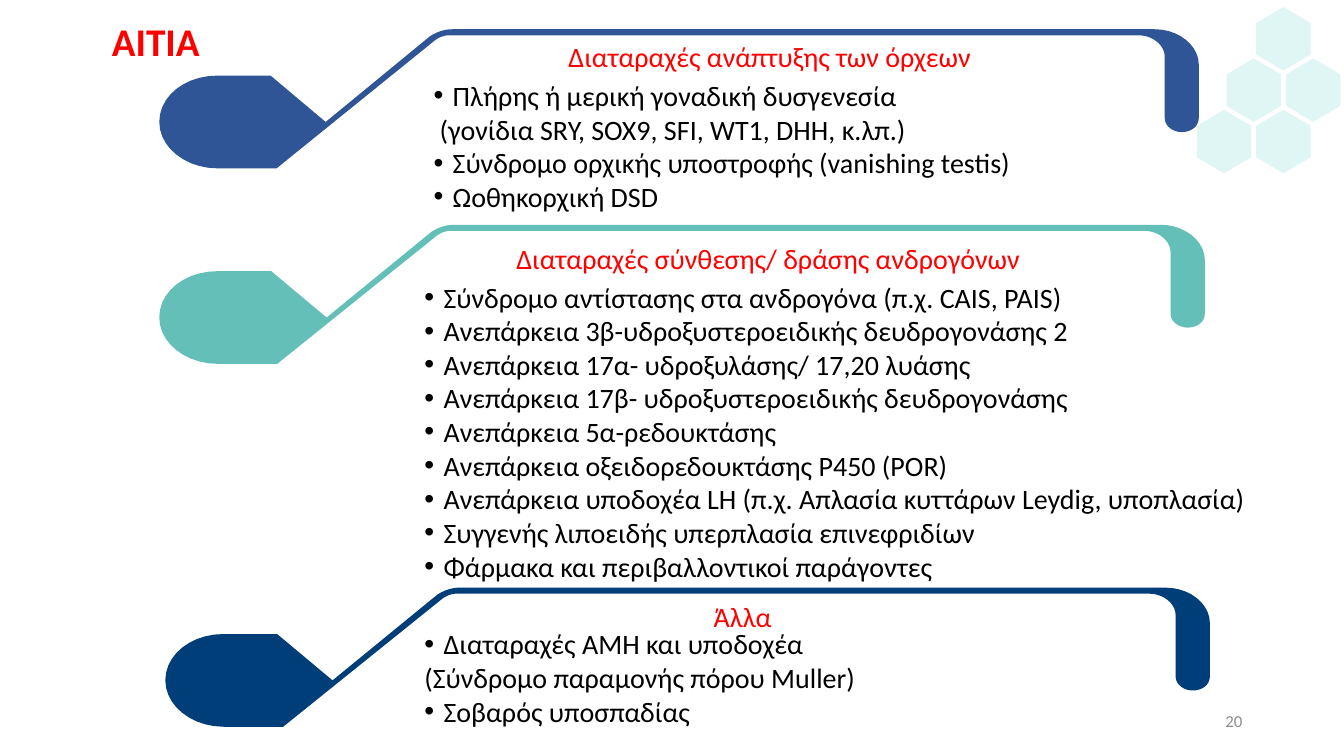
from lxml import etree
from pptx import Presentation
from pptx.dml.color import RGBColor
from pptx.enum.text import MSO_ANCHOR, MSO_AUTO_SIZE, PP_ALIGN
from pptx.oxml.ns import qn
from pptx.util import Inches, Pt

LEFT, CENTER, RIGHT = PP_ALIGN.LEFT, PP_ALIGN.CENTER, PP_ALIGN.RIGHT
TOP, MIDDLE, BOTTOM = MSO_ANCHOR.TOP, MSO_ANCHOR.MIDDLE, MSO_ANCHOR.BOTTOM
FIT = MSO_AUTO_SIZE.SHAPE_TO_FIT_TEXT
FONT = "Calibri"
RED, BLACK, GREY, PALE = "FF0000", "000000", "8C8C8C", "E0F6F4"
CURVE_STEPS = 10
RIBBON_WIDTH = 10.37

RIBBON = [
    (9.93, 0), (2.92, 0),
    (2.84, 0, 2.76, 0.03, 2.7, 0.07),
    (1.66, 0.92), (1.11, 0.46), (0.58, 0.46),
    (0.26, 0.46, 0, 0.66, 0, 0.92),
    (0, 1.17, 0.26, 1.38, 0.58, 1.38),
    (1.17, 1.38), (2.75, 0.11),
    (2.79, 0.08, 2.84, 0.06, 2.89, 0.06),
    (9.77, 0.06),
    (9.91, 0.06, 10.03, 0.16, 10.03, 0.27),
    (10.03, 0.88),
    (10.03, 0.96, 10.11, 1.02, 10.2, 1.02),
    (10.3, 1.02, 10.37, 0.96, 10.37, 0.88),
    (10.37, 0.35),
    (10.37, 0.16, 10.17, 0, 9.93, 0),
]
HEXAGON = [(0.27, 0), (0.54, 0.16), (0.54, 0.47),
           (0.27, 0.63), (0, 0.47), (0, 0.16)]
HEXAGON_CELLS = [(1, 1), (3, 1), (2, 0), (0, 2), (2, 2)]

SECTIONS = [
    ("64BFB9", (1.58, 2.23, 10.37),
     "Διαταραχές σύνθεσης/ δράσης ανδρογόνων", (4.46, 2.34, 6.32, 0.44),
     (4.21, 2.73, 9.06, 3.47),
     ["Σύνδρομο αντίστασης στα ανδρογόνα (π.χ. CAIS, PAIS)",
      "Ανεπάρκεια 3β-υδροξυστεροειδικής δευδρογονάσης 2",
      "Ανεπάρκεια 17α- υδροξυλάσης/ 17,20 λυάσης",
      "Ανεπάρκεια 17β- υδροξυστεροειδικής δευδρογονάσης",
      "Ανεπάρκεια 5α-ρεδουκτάσης",
      "Ανεπάρκεια οξειδορεδουκτάσης Ρ450 (POR)",
      "Ανεπάρκεια υποδοχέα LH (π.χ. Απλασία κυττάρων Leydig, υποπλασία)",
      "Συγγενής λιποειδής υπερπλασία επινεφριδίων",
      "Φάρμακα και περιβαλλοντικοί παράγοντες"], 0),
    ("003E79", (1.64, 5.83, 10.36),
     "Άλλα", (4.21, 5.89, 6.31, 0.44),
     (4.21, 6.17, 7.34, 1.11),
     ["Διαταραχές ΑΜΗ και υποδοχέα",
      "(Σύνδρομο παραμονής πόρου Muller)",
      "Σοβαρός υποσπαδίας"], 0),
    ("2F5597", (1.58, 0.29, 10.31),
     "Διαταραχές ανάπτυξης των όρχεων", (4.38, 0.33, 6.51, 0.44),
     (4.3, 0.73, 7.83, 1.78),
     ["Πλήρης ή μερική γοναδική δυσγενεσία",
      "(γονίδια SRY, SOX9, SFI, WT1, DHH, κ.λπ.)",
      "Σύνδρομο ορχικής υποστροφής (vanishing testis)",
      "Ωοθηκορχική DSD"], 0.06),
]


def rgb(color):
    return RGBColor.from_string(color)


def flatten(segments):
    points = []
    for seg in segments:
        if len(seg) == 2:
            points.append(seg)
            continue
        x0, y0 = points[-1]
        x1, y1, x2, y2, x3, y3 = seg
        for i in range(1, CURVE_STEPS + 1):
            t = i / CURVE_STEPS
            u = 1 - t
            a, b, c, d = u ** 3, 3 * u * u * t, 3 * u * t * t, t ** 3
            points.append((a * x0 + b * x1 + c * x2 + d * x3,
                           a * y0 + b * y1 + c * y2 + d * y3))
    return points


def add_outline(slide, segments, left, top, color, stretch=1):
    points = [(Inches(left + x * stretch), Inches(top + y))
              for x, y in flatten(segments)]
    builder = slide.shapes.build_freeform(*points[0], scale=1.0)
    builder.add_line_segments(points[1:], close=True)
    sp = builder.convert_to_shape()
    sp.shadow.inherit = False
    sp.fill.solid()
    sp.fill.fore_color.rgb = rgb(color)
    sp.line.fill.background()


def add_text(slide, box, lines, size, color, align=LEFT, anchor=TOP,
             bold=False, inset=0.1, fit=True):
    tf = slide.shapes.add_textbox(*map(Inches, box)).text_frame
    tf.word_wrap = True
    if fit:
        tf.auto_size = FIT
    tf.vertical_anchor = anchor
    tf.margin_left = tf.margin_right = Inches(inset)
    tf.text = "\n".join(lines)
    for p in tf.paragraphs:
        p.alignment = align
        for r in p.runs:
            r.font.name = FONT
            r.font.size = Pt(size)
            r.font.bold = bold
            r.font.color.rgb = rgb(color)
    return tf


def add_bullet(p):
    pPr = p._p.get_or_add_pPr()
    pPr.set("marL", str(Inches(0.19)))
    pPr.set("indent", str(-Inches(0.19)))
    etree.SubElement(pPr, qn("a:buFont")).set("typeface", "Arial")
    etree.SubElement(pPr, qn("a:buChar")).set("char", "•")


def add_section(slide, color, ribbon, heading, heading_box, list_box, items,
                note_indent):
    left, top, width = ribbon
    add_outline(slide, RIBBON, left, top, color, width / RIBBON_WIDTH)
    add_text(slide, heading_box, [heading], 20, RED, CENTER, BOTTOM, inset=0)
    tf = add_text(slide, list_box, items, 20, BLACK, inset=0)
    for p in tf.paragraphs:
        if p.text.startswith("("):
            p._p.get_or_add_pPr().set("marL", str(Inches(note_indent)))
        else:
            add_bullet(p)


def main():
    prs = Presentation()
    prs.slide_width, prs.slide_height = Inches(13.33), Inches(7.5)
    slide = prs.slides.add_slide(prs.slide_layouts[6])
    for section in SECTIONS:
        add_section(slide, *section)
    add_text(slide, (0.14, 0.12, 2.81, 0.57), ["ΑΙΤΙΑ"], 28, RED, CENTER,
             bold=True)
    for col, row in HEXAGON_CELLS:
        add_outline(slide, HEXAGON, 11.87 + 0.295 * col, 0.07 + 0.51 * row,
                    PALE)
    add_text(slide, (9.42, 6.95, 3, 0.4), ["20"], 12, GREY, RIGHT, MIDDLE,
             fit=False)
    prs.save("out.pptx")


if __name__ == "__main__":
    main()
